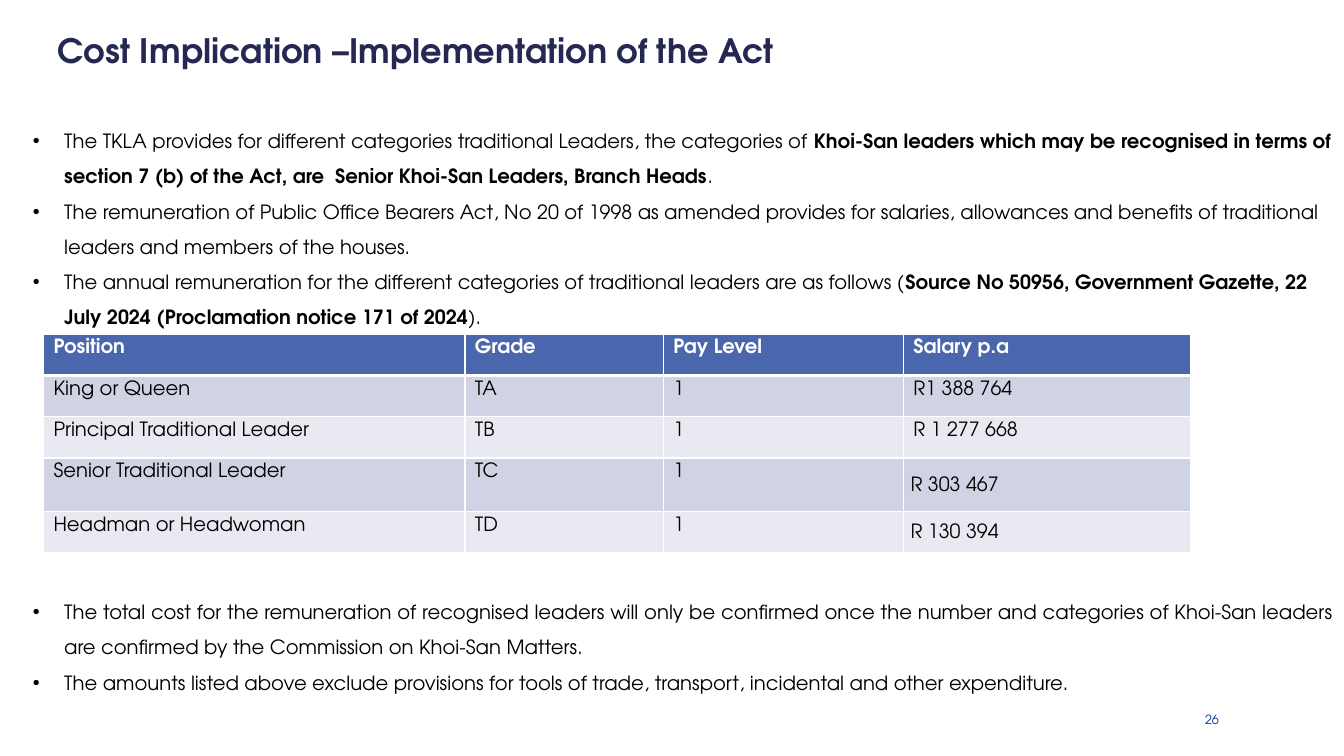
from lxml.etree import SubElement
from pptx import Presentation
from pptx.dml.color import RGBColor as RGB
from pptx.enum.text import MSO_ANCHOR as ANCHOR, PP_ALIGN as ALIGN
from pptx.oxml.ns import qn
from pptx.util import Cm, Pt

FONT = "TeX Gyre Adventor"
COLORS = {"title": "242852", "text": "000000", "number": "003399", "white": "FFFFFF",
          "header": "4A66AC", "odd": "D0D3E3", "even": "E9EAF1"}
FORMATS = {
    "title": {"size": Pt(24), "bold": True},
    "text": {"size": Pt(14), "bold": False},
    "strong": {"size": Pt(14), "bold": True},
    "number": {"size": Pt(9), "bold": False},
}

INTRO = [
    [("The TKLA provides for different categories traditional Leaders, the categories of ", "text"),
     ("Khoi-San leaders which may be recognised in terms of section 7 (b) of the Act, "
      "are  Senior Khoi-San Leaders, Branch Heads", "strong"),
     (".", "text")],
    [("The remuneration of Public Office Bearers Act, No 20 of 1998 as amended provides for "
      "salaries, allowances and benefits of traditional leaders and members of the houses.", "text")],
    [("The annual remuneration for the different categories of traditional leaders are as follows (", "text"),
     ("Source No 50956, Government Gazette, 22 July 2024 (Proclamation notice 171 of 2024", "strong"),
     (").", "text")],
]
CLOSING = [
    [("The total cost for the remuneration of recognised leaders will only be confirmed once the "
      "number and categories of Khoi-San leaders are confirmed by the Commission on Khoi-San Matters.", "text")],
    [("The amounts listed above exclude provisions for tools of trade, transport, incidental and "
      "other expenditure.", "text")],
]
SALARIES = [
    ["Position", "Grade", "Pay Level", "Salary p.a"],
    ["King or Queen", "TA", "1", "R1 388 764"],
    ["Principal Traditional Leader", "TB", "1", "R 1 277 668"],
    ["Senior Traditional Leader", "TC", "1", "R 303 467"],
    ["Headman or Headwoman", "TD", "1", "R 130 394"],
]
COL_WIDTHS = [10.62, 5, 6.05, 7.24]
ROW_HEIGHTS = [1.04, 1.04, 1.04, 1.35, 1.04]


def add_run(p, text, style, color):
    r = p.add_run()
    r.text = text
    r.font.name = FONT
    r.font.color.rgb = RGB.from_string(COLORS[color])
    for name, value in FORMATS[style].items():
        setattr(r.font, name, value)


def set_margins(target, left, top, right, bottom):
    margins = {"left": left, "top": top, "right": right, "bottom": bottom}
    for side, value in margins.items():
        setattr(target, f"margin_{side}", Cm(value))


def add_box(slide, box):
    tf = slide.shapes.add_textbox(*map(Cm, box)).text_frame
    tf.word_wrap = True
    return tf


def add_label(slide, box, text, style, margins, align):
    tf = add_box(slide, box)
    tf.vertical_anchor = ANCHOR.MIDDLE
    set_margins(tf, *margins)
    p = tf.paragraphs[0]
    p.alignment = align
    add_run(p, text, style, style)


def add_bullets(slide, box, items, align):
    tf = add_box(slide, box)
    for i, runs in enumerate(items):
        p = tf.add_paragraph() if i else tf.paragraphs[0]
        p.alignment = align
        p.line_spacing = 1.5
        pPr = p._p.get_or_add_pPr()
        pPr.set("marL", str(Cm(0.79)))
        pPr.set("indent", str(-Cm(0.79)))
        SubElement(pPr, qn("a:buFont"), typeface="Arial")
        SubElement(pPr, qn("a:buChar"), char="•")
        for text, style in runs:
            add_run(p, text, style, "text")


def set_borders(cell, top, bottom):
    tcPr = cell._tc.get_or_add_tcPr()
    for side, width in {"L": 1, "R": 1, "T": top, "B": bottom}.items():
        ln = SubElement(tcPr, qn(f"a:ln{side}"), w=str(Pt(width)))
        SubElement(SubElement(ln, qn("a:solidFill")), qn("a:srgbClr"), val=COLORS["white"])


def add_salary_table(slide, box):
    table = slide.shapes.add_table(len(SALARIES), len(COL_WIDTHS), *map(Cm, box)).table
    for col, width in zip(table.columns, COL_WIDTHS):
        col.width = Cm(width)
    for row, height in zip(table.rows, ROW_HEIGHTS):
        row.height = Cm(height)
    for i, values in enumerate(SALARIES):
        fill = "header" if i == 0 else "odd" if i % 2 else "even"
        style, color = ("text", "text") if i else ("strong", "white")
        for j, value in enumerate(values):
            cell = table.cell(i, j)
            set_borders(cell, 3 if i == 1 else 1, 3 if i == 0 else 1)
            cell.fill.solid()
            cell.fill.fore_color.rgb = RGB.from_string(COLORS[fill])
            p = cell.text_frame.paragraphs[0]
            set_margins(cell, 0.25, 0.13, 0.25, 0.13)
            if i > 2 and j == 3:
                set_margins(cell, 0.18, 0, 0.18, 0)
                cell.vertical_anchor = ANCHOR.MIDDLE
                p.line_spacing = 1.15
            add_run(p, value, style, color)


def main():
    prs = Presentation()
    prs.slide_width, prs.slide_height = Cm(33.87), Cm(19.05)
    slide = prs.slides.add_slide(prs.slide_layouts[6])
    add_label(slide, (1.02, 0.48, 31.85, 1.55), "Cost Implication –Implementation of the Act",
              "title", (0.43, 0.2, 0.2, 0.2), ALIGN.LEFT)
    add_bullets(slide, (0.58, 2.83, 33.29, 5.6), INTRO, ALIGN.LEFT)
    add_salary_table(slide, (1.1, 8.42, sum(COL_WIDTHS), sum(ROW_HEIGHTS)))
    add_bullets(slide, (0.58, 14.7, 33.29, 2.95), CLOSING, ALIGN.JUSTIFY)
    add_label(slide, (28.8, 17.71, 2.15, 0.64), "26", "number", (0.2, 0.2, 0.23, 0), ALIGN.RIGHT)
    prs.save("out.pptx")


if __name__ == "__main__":
    main()
